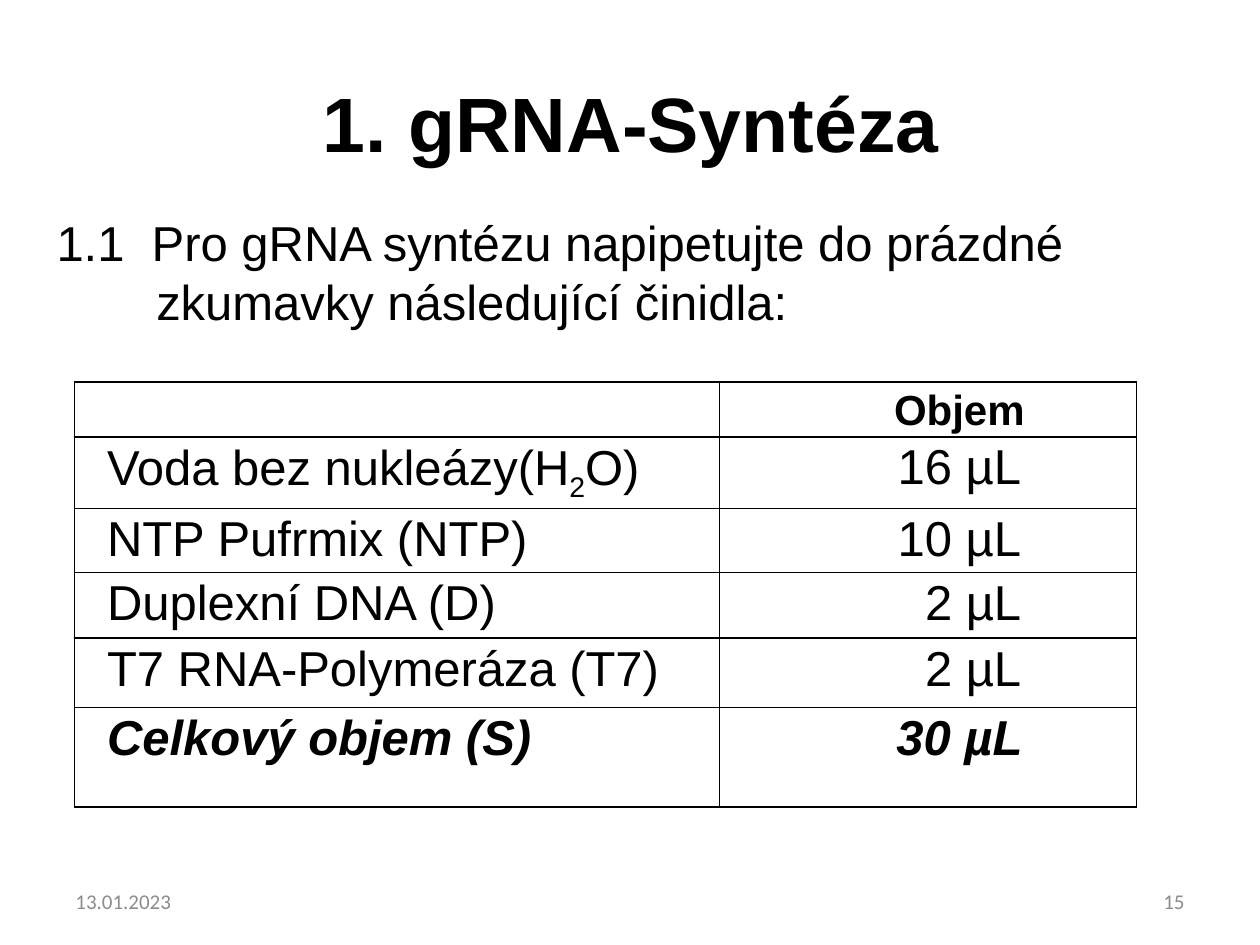
from dataclasses import dataclass

from lxml.etree import SubElement
from pptx import Presentation
from pptx.dml.color import RGBColor
from pptx.enum.text import MSO_ANCHOR as ANCHOR, PP_ALIGN as ALIGN
from pptx.oxml.ns import qn
from pptx.util import Pt


@dataclass(frozen=True)
class Theme:
    ink: str = "000000"
    muted: str = "8C8C8C"
    font: str = "Arial"
    footer_font: str = "Calibri"
    title: int = 44
    body: int = 28
    header: int = 24
    footer: int = 12
    border: int = 1


theme = Theme()
TITLE = dict(name=theme.font, size=Pt(theme.title), bold=True)
BODY = dict(name=theme.font, size=Pt(theme.body))
HEADER = dict(name=theme.font, size=Pt(theme.header), bold=True)
TOTAL = dict(BODY, bold=True, italic=True)
FOOTER = dict(name=theme.footer_font, size=Pt(theme.footer))


def write(p, parts, fmt, color=theme.ink, align=ALIGN.LEFT, left=0, hang=0):
    p.alignment = align
    pPr = p._p.get_or_add_pPr()
    pPr.set("marL", str(Pt(left)))
    pPr.set("indent", str(Pt(hang)))
    for i, text in enumerate(parts):
        r = p.add_run()
        r.text = text
        for key, value in fmt.items():
            setattr(r.font, key, value)
        r.font.color.rgb = RGBColor.from_string(color)
        if i % 2:
            r._r.get_or_add_rPr().set("baseline", "-25000")


def add_borders(cell):
    tcPr = cell._tc.get_or_add_tcPr()
    for i, side in enumerate(("lnL", "lnR", "lnT", "lnB")):
        ln = SubElement(tcPr, qn(f"a:{side}"), w=str(Pt(theme.border)))
        fill = SubElement(ln, qn("a:solidFill"))
        SubElement(fill, qn("a:srgbClr"), val=theme.ink)
        tcPr.insert(i, ln)


prs = Presentation()
prs.slide_width, prs.slide_height = Pt(720), Pt(540)
s = prs.slides.add_slide(prs.slide_layouts[6])

texts = [
    ((36.7, 28, 648, 83), "1. gRNA-Syntéza", TITLE, ANCHOR.MIDDLE, 3.6,
     dict(align=ALIGN.CENTER)),
    ((25.2, 108, 669, 116.6),
     "1.1\u00a0 Pro\u00a0gRNA syntézu napipetujte\u00a0do prázdné "
     "zkumavky\u00a0následující činidla:", BODY, ANCHOR.TOP, 13.4,
     dict(left=57, hang=-57)),
    ((36, 500.5, 168, 28.8), "13.01.2023", FOOTER, ANCHOR.MIDDLE, 3.6,
     dict(color=theme.muted)),
    ((516, 500.5, 168, 28.8), "15", FOOTER, ANCHOR.MIDDLE, 3.6,
     dict(color=theme.muted, align=ALIGN.RIGHT)),
]
for box, text, fmt, anchor, top, style in texts:
    tf = s.shapes.add_textbox(*map(Pt, box)).text_frame
    tf.word_wrap = True
    tf.vertical_anchor = anchor
    tf.margin_top = Pt(top)
    write(tf.paragraphs[0], [text], fmt, **style)

rows = [
    (31.4, [], "Objem", HEADER),
    (36.7, ["Voda bez nukleázy(H", "2", "O)"], "16 µL", BODY),
    (36.7, ["NTP Pufrmix (NTP)"], "10 µL", BODY),
    (37.4, ["Duplexní DNA (D)"], "2 µL", BODY),
    (39.6, ["T7 RNA-Polymeráza (T7)"], "2 µL", BODY),
    (56.9, ["Celkový objem\u00a0(S)"], "30 µL", TOTAL),
]
widths = (368.6, 238.3)
digit_width = 0.56 * theme.body
height = sum(row[0] for row in rows)
table = s.shapes.add_table(len(rows), 2, Pt(42.5), Pt(218.2),
                           Pt(sum(widths)), Pt(height)).table
table.first_row = table.horz_banding = False
for column, width in zip(table.columns, widths):
    column.width = Pt(width)

for i, (row_height, reagent, volume, fmt) in enumerate(rows):
    table.rows[i].height = Pt(row_height)
    shift = digit_width if volume.startswith("2 ") else 0
    styles = [
        (reagent, dict(left=36, hang=-22.3)),
        ([volume], dict(left=36 + shift, align=ALIGN.CENTER)),
    ]
    for j, (parts, style) in enumerate(styles):
        cell = table.cell(i, j)
        cell.fill.background()
        cell.margin_left = cell.margin_right = Pt(5)
        cell.margin_top = cell.margin_bottom = 0
        cell.vertical_anchor = ANCHOR.TOP if i else ANCHOR.MIDDLE
        p = cell.text_frame.paragraphs[0]
        p.line_spacing = 1.07
        write(p, parts, fmt, **style)
        add_borders(cell)

prs.save("out.pptx")
